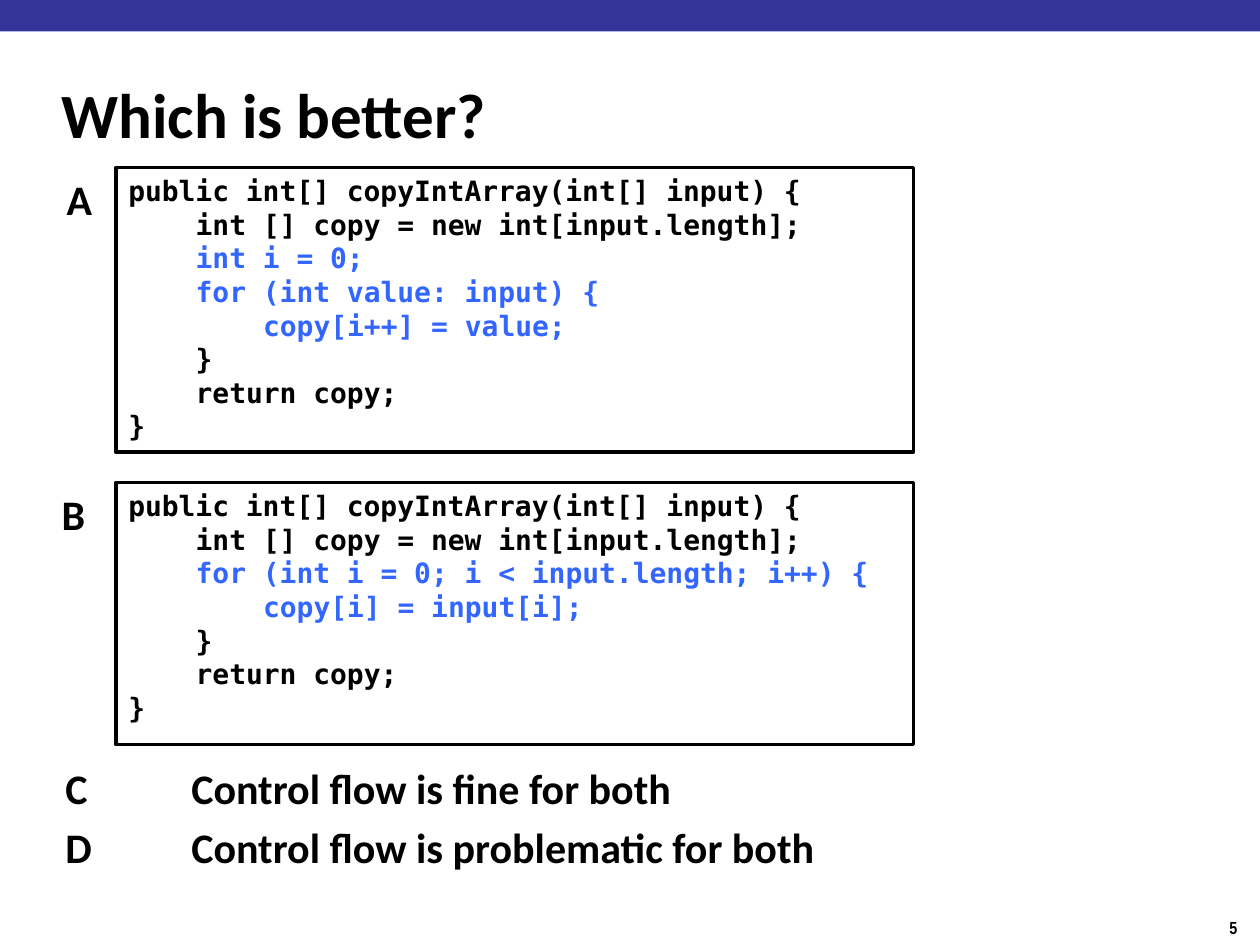
from pptx import Presentation
from pptx.dml.color import RGBColor
from pptx.enum.shapes import MSO_SHAPE
from pptx.enum.text import MSO_ANCHOR, PP_ALIGN
from pptx.util import Inches, Pt

presentation = Presentation()
presentation.slide_width = Inches(10)
presentation.slide_height = Inches(7.5)
slide = presentation.slides.add_slide(presentation.slide_layouts[6])
column = presentation.slide_width / 100
row = presentation.slide_height / 100


def add_box(left, top, width, height, fill=None, line=None):
    area = [round(left * column), round(top * row), round(width * column), round(height * row)]
    if fill is None:
        return slide.shapes.add_textbox(*area)
    shape = slide.shapes.add_shape(MSO_SHAPE.RECTANGLE, *area)
    shape.shadow.inherit = False
    shape.fill.solid()
    shape.fill.fore_color.rgb = RGBColor.from_string(fill)
    if line is None:
        shape.line.fill.background()
    else:
        shape.line.color.rgb = RGBColor.from_string(line)
        shape.line.width = Pt(2)
    return shape


def add_text(paragraph, text, size, font="Calibri", color="000000"):
    paragraph.alignment = PP_ALIGN.LEFT
    run = paragraph.add_run()
    run.text = text
    run.font.size = Pt(size)
    run.font.name = font
    run.font.bold = True
    run.font.color.rgb = RGBColor.from_string(color)


add_box(0, 0, 100, 3.33, "333399")

title = add_box(3.9, 6.4, 83, 11.07)
title.text_frame.word_wrap = True
title.text_frame.vertical_anchor = MSO_ANCHOR.MIDDLE
add_text(title.text_frame.paragraphs[0], "Which is better?", 36)

black, blue = "000000", "3366FF"
opening = [
    (0, "public int[] copyIntArray(int[] input) {", black),
    (1, "int [] copy = new int[input.length];", black),
]
closing = [(1, "}", black), (1, "return copy;", black), (0, "}", black)]
loop_a = [
    (1, "int i = 0;", blue),
    (1, "for (int value: input) {", blue),
    (2, "copy[i++] = value;", blue),
]
loop_b = [
    (1, "for (int i = 0; i < input.length; i++) {", blue),
    (2, "copy[i] = input[i];", blue),
]
indent_step = Pt(38.53)

for letter, letter_left, letter_width, top, height, loop in [
    ("A", 4.3, 4.1, 17.73, 30.13, loop_a),
    ("B", 3.9, 3.9, 51.07, 27.73, loop_b),
]:
    label = add_box(letter_left, top, letter_width, 6.67)
    label.text_frame.word_wrap = False
    add_text(label.text_frame.paragraphs[0], letter, 24)

    code_frame = add_box(9.2, top, 63.3, height, "FFFFFF", black).text_frame
    code_frame.word_wrap = True
    code_frame.vertical_anchor = MSO_ANCHOR.TOP
    for number, (level, text, color) in enumerate(opening + loop + closing):
        paragraph = code_frame.add_paragraph() if number else code_frame.paragraphs[0]
        paragraph._p.get_or_add_pPr().set("marL", str(level * indent_step))
        add_text(paragraph, text, 16, "DejaVu Sans Mono", color)

answer_frame = add_box(4.2, 80, 86.4, 15.73).text_frame
answer_frame.word_wrap = True
answers = ["C\tControl flow is fine for both", "D\tControl flow is problematic for both"]
for number, answer in enumerate(answers):
    paragraph = answer_frame.add_paragraph() if number else answer_frame.paragraphs[0]
    paragraph.space_before = Pt(4.8)
    properties = paragraph._p.get_or_add_pPr()
    properties.set("marL", str(Inches(1)))
    properties.set("indent", str(-Inches(1)))
    add_text(paragraph, answer, 24)

page_number = add_box(96.6, 96.4, 3.4, 3.6)
page_number.text_frame.word_wrap = False
add_text(page_number.text_frame.paragraphs[0], "5", 10, "Arial Narrow")

presentation.save("out.pptx")
